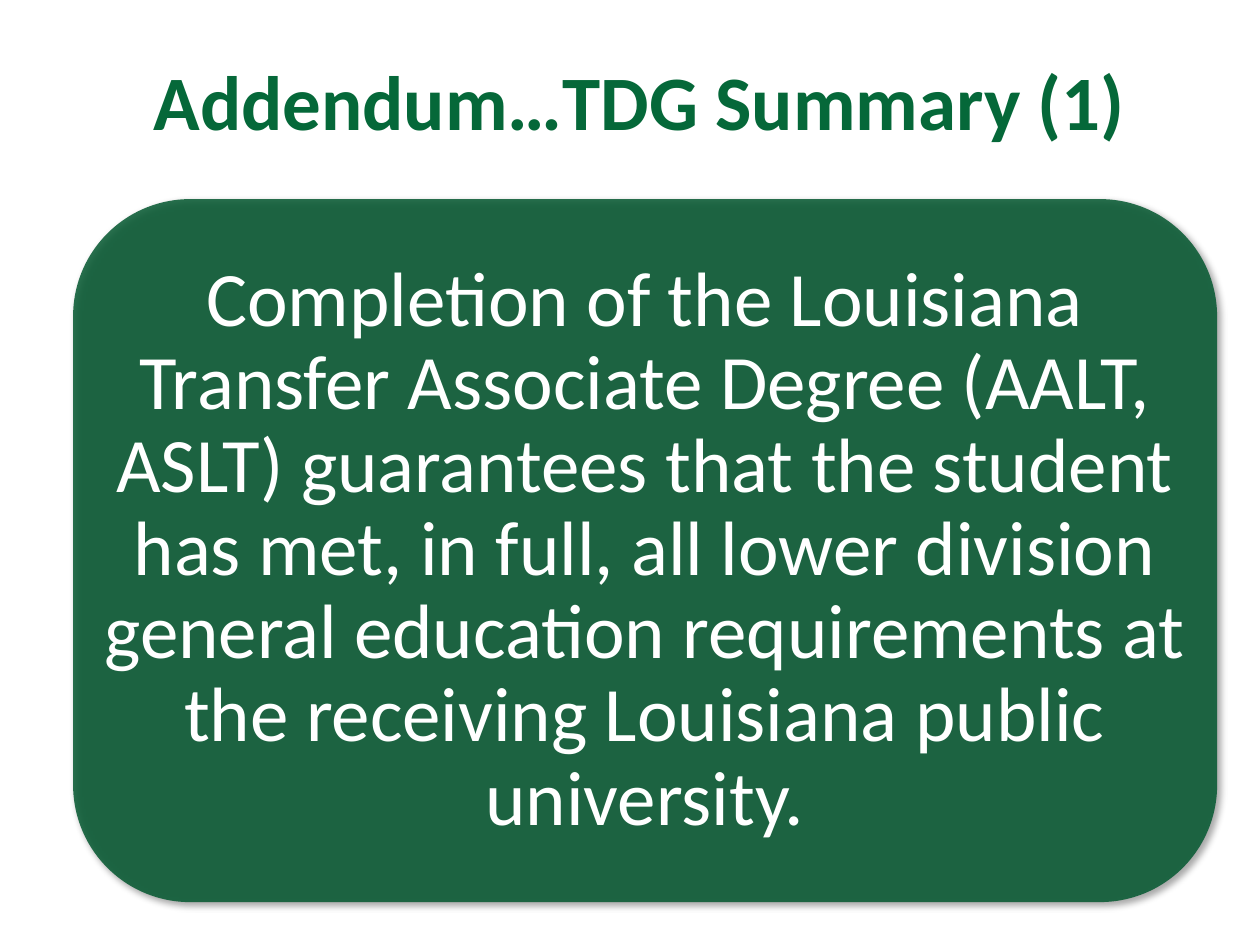
from dataclasses import dataclass

from lxml.etree import SubElement
from pptx import Presentation
from pptx.dml.color import RGBColor
from pptx.enum.shapes import MSO_SHAPE
from pptx.enum.text import MSO_ANCHOR, PP_ALIGN
from pptx.oxml import parse_xml
from pptx.oxml.ns import nsdecls, qn
from pptx.util import Inches, Pt


@dataclass(frozen=True)
class Theme:
    heading: RGBColor = RGBColor(0x05, 0x68, 0x39)
    panel: RGBColor = RGBColor(0x04, 0x58, 0x30)
    statement: RGBColor = RGBColor(0xFF, 0xFF, 0xFF)
    font: str = "Calibri"
    size: Pt = Pt(44)


def set_all(target, values):
    for name, value in values.items():
        setattr(target, name, value)


def write(holder, wording, color, bold, inset, spacing):
    frame = holder.text_frame
    frame.text = wording
    set_all(frame, {"word_wrap": True, "vertical_anchor": MSO_ANCHOR.MIDDLE,
                    "margin_left": inset, "margin_right": inset,
                    "margin_top": inset, "margin_bottom": inset})
    paragraph = frame.paragraphs[0]
    set_all(paragraph, {"alignment": PP_ALIGN.CENTER, "line_spacing": spacing})
    set_all(paragraph.font, {"name": theme.font, "size": theme.size, "bold": bold})
    paragraph.font.color.rgb = color


theme = Theme()
presentation = Presentation()
set_all(presentation, {"slide_width": Inches(10), "slide_height": Inches(7.5)})
slide = presentation.slides.add_slide(presentation.slide_layouts[5])

heading = slide.shapes.title
set_all(heading, {"left": Inches(0.58), "top": Inches(0.17),
                  "width": Inches(9), "height": Inches(1.25)})
write(heading, "Addendum…TDG Summary (1)", theme.heading, True, Inches(0.1), 1.0)

panel_area = Inches(0.58), Inches(1.58), Inches(9.08), Inches(5.58)
panel = slide.shapes.add_shape(MSO_SHAPE.ROUNDED_RECTANGLE, *panel_area)
panel.fill.solid()
panel.fill.fore_color.rgb = theme.panel
panel.line.fill.background()
panel_color = panel.fill._xPr.find(qn("a:solidFill")).find(qn("a:srgbClr"))
SubElement(panel_color, qn("a:alpha"), val="85000")
panel.element.spPr.append(parse_xml(
    f'<a:effectLst {nsdecls("a")}>'
    f'<a:outerShdw blurRad="{Pt(4)}" dist="{Pt(3)}" dir="2700000" algn="tl" rotWithShape="0">'
    '<a:srgbClr val="000000"><a:alpha val="40000"/></a:srgbClr>'
    '</a:outerShdw></a:effectLst>'))

statement = slide.shapes.add_textbox(*panel_area)
write(statement,
      "Completion of the Louisiana Transfer Associate Degree (AALT, ASLT) guarantees "
      "that the student has met, in full, all lower division general education "
      "requirements at the receiving Louisiana public university.",
      theme.statement, False, Inches(0.18), 0.9)

presentation.save("out.pptx")
